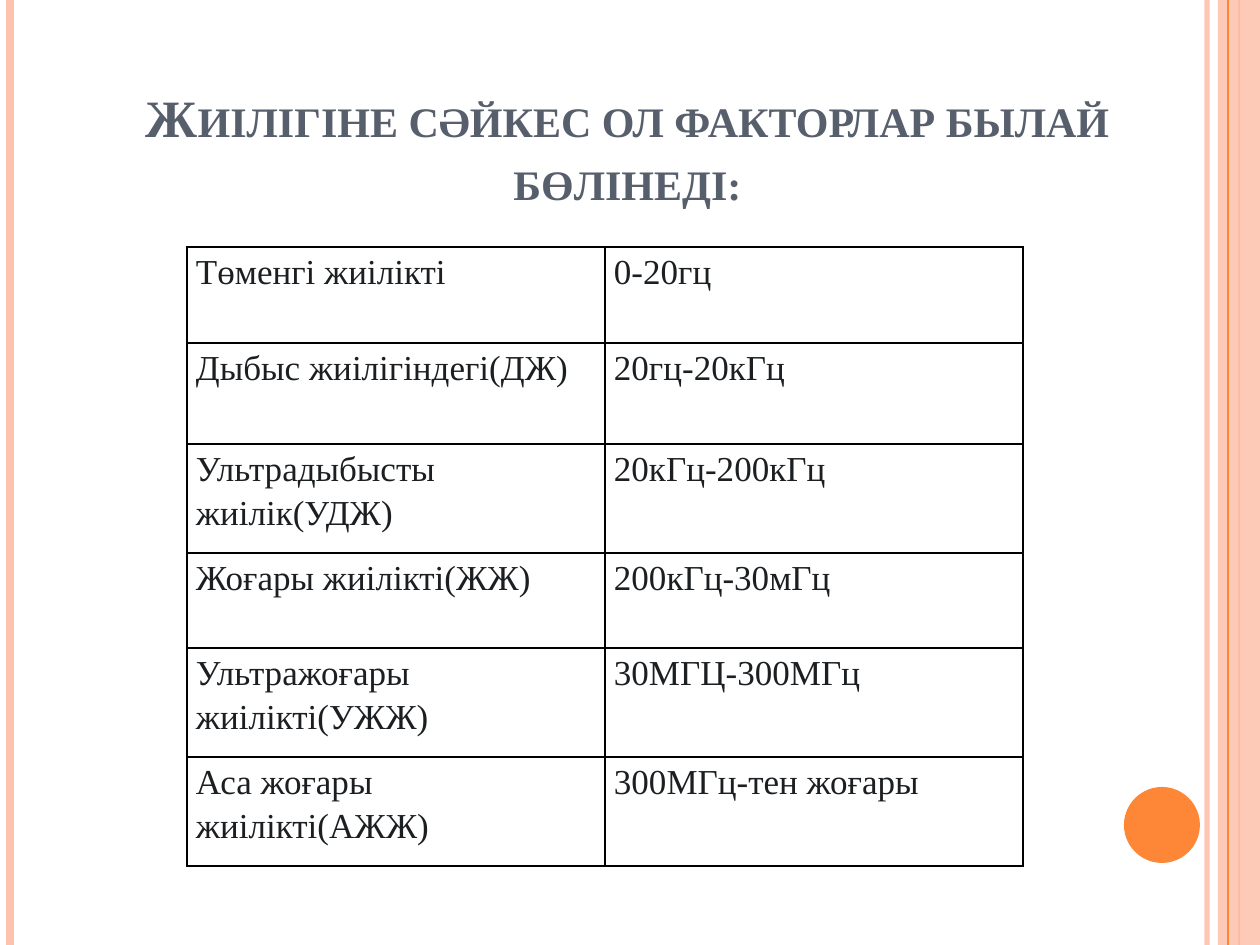
"""Build a slide with a table of frequency ranges beside decorative stripes."""
import pptx
import pptx.dml.color
import pptx.enum.shapes
import pptx.enum.text
import pptx.oxml.ns
import pptx.util
import lxml.etree

SCALE = 914400 / 126
FONT = "Times New Roman"
qn = pptx.oxml.ns.qn


def paint(fill, color, element=None, opacity=100):
    fill.solid()
    fill.fore_color.rgb = pptx.dml.color.RGBColor.from_string(color)
    if opacity < 100:
        node = next(element.iter(qn("a:srgbClr")))
        lxml.etree.SubElement(node, qn("a:alpha"), val=str(opacity * 1000))


def write(frame, text, size, color, bold=False, small_caps=False, align="LEFT", spacing=1.0):
    frame.word_wrap = True
    para = frame.paragraphs[0]
    para.alignment = getattr(pptx.enum.text.PP_ALIGN, align)
    para.line_spacing = spacing
    span = para.add_run()
    span.text = text
    span.font.name = FONT
    span.font.size = pptx.util.Pt(size)
    span.font.bold = bold
    paint(span.font.fill, color)
    if small_caps:
        span.font.fill
        para.runs[0].font.underline = None
        next(frame.paragraphs[0].runs[0]._r.iter(qn("a:rPr"))).set("cap", "small")


deck = pptx.Presentation()
deck.slide_width = round(1260 * SCALE)
deck.slide_height = round(945 * SCALE)
page = deck.slides.add_slide(deck.slide_layouts[5])
paint(page.background.fill, "FFFFFF")

decorations = [
    ("line", 1207, 3, "FEC3AE", 93),
    ("line", 10, 4.5, "FEC3AE", 100),
    ("line", 1239, 1.5, "FE8637", 100),
    ("RECTANGLE", (1218, 0, 42, 945), 0, "FEC3AE", 87),
    ("line", 1228, 0.75, "FE8637", 100),
    ("OVAL", (1124, 787, 76, 76), 0, "FE8637", 100),
]
for kind, place, weight, color, opacity in decorations:
    if kind == "line":
        x = round(place * SCALE)
        stripe = page.shapes.add_connector(
            pptx.enum.shapes.MSO_CONNECTOR.STRAIGHT, x, 0, x, deck.slide_height)
        stripe.line.width = pptx.util.Pt(weight)
        paint(stripe.line.fill, color, stripe.element, opacity)
        lxml.etree.SubElement(stripe.element.spPr, qn("a:effectLst"))
    else:
        shape = page.shapes.add_shape(
            getattr(pptx.enum.shapes.MSO_SHAPE, kind), *[round(n * SCALE) for n in place])
        shape.shadow.inherit = False
        shape.line.fill.background()
        paint(shape.fill, color, shape.element, opacity)

title = page.shapes.title
title.left, title.top, title.width, title.height = [round(n * SCALE) for n in (113, 59, 1029, 158)]
title.text_frame.vertical_anchor = pptx.enum.text.MSO_ANCHOR.BOTTOM
write(title.text_frame, "Жиілігіне сәйкес ол факторлар былай бөлінеді:", 30, "575F6D",
      bold=True, small_caps=True, align="CENTER")

ranges = [
    ("Төменгі жиілікті", "0-20гц", 96),
    ("Дыбыс жиілігіндегі(ДЖ)", "20гц-20кГц", 101),
    ("Ультрадыбысты жиілік(УДЖ)", "20кГц-200кГц", 109),
    ("Жоғары жиілікті(ЖЖ)", "200кГц-30мГц", 95),
    ("Ультражоғары жиілікті(УЖЖ)", "30МГЦ-300МГц", 109),
    ("Аса жоғары жиілікті(АЖЖ)", "300МГц-тен жоғары", 109),
]
table = page.shapes.add_table(len(ranges), 2, *[round(n * SCALE) for n in (187, 247, 836, 619)]).table
table.first_row = False
table.horz_banding = False
for row, (*texts, height) in zip(table.rows, ranges):
    row.height = round(height * SCALE)
    for cell, text in zip(row.cells, texts):
        cell.margin_left = cell.margin_right = round(9 * SCALE)
        cell.margin_top = cell.margin_bottom = 0
        write(cell.text_frame, text, 20, "1B1F21", spacing=1.15)
        properties = cell._tc.get_or_add_tcPr()
        for side in ("lnL", "lnR", "lnT", "lnB"):
            border = lxml.etree.SubElement(properties, qn("a:" + side), w="12700")
            solid = lxml.etree.SubElement(border, qn("a:solidFill"))
            lxml.etree.SubElement(solid, qn("a:srgbClr"), val="000000")
        cell.fill.background()

deck.save("out.pptx")
